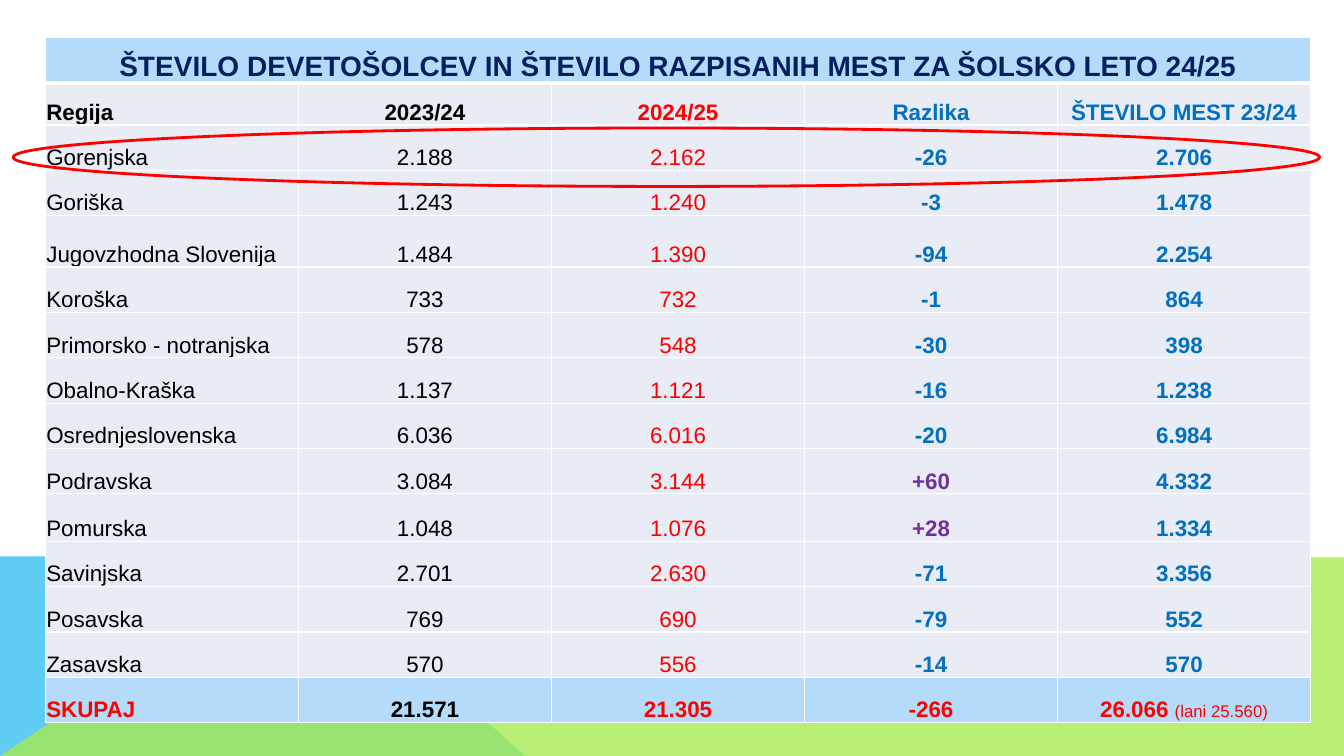
import pptx
import pptx.dml.color
import pptx.enum.shapes
import pptx.enum.text
import pptx.oxml
import pptx.oxml.ns
import pptx.util
from lxml import etree

Inches = pptx.util.Inches
RGBColor = pptx.dml.color.RGBColor
ALIGN = pptx.enum.text.PP_ALIGN

WHITE = RGBColor(0xFF, 0xFF, 0xFF)
BLACK = RGBColor(0x00, 0x00, 0x00)
NAVY = RGBColor(0x00, 0x20, 0x60)
RED = RGBColor(0xFF, 0x00, 0x00)
BLUE = RGBColor(0x00, 0x70, 0xC0)
PURPLE = RGBColor(0x70, 0x30, 0xA0)
LIGHT_BLUE = RGBColor(0xB4, 0xDC, 0xFA)
LAVENDER = RGBColor(0xE9, 0xEB, 0xF5)
SKY = RGBColor(0x5E, 0xCC, 0xF3)
GREEN = RGBColor(0xA7, 0xEA, 0x52)

TITLE = "ŠTEVILO DEVETOŠOLCEV IN ŠTEVILO RAZPISANIH MEST ZA ŠOLSKO LETO 24/25"
ROWS = [
    ("Regija", "2023/24", "2024/25", "Razlika", "ŠTEVILO MEST 23/24"),
    ("Gorenjska", "2.188", "2.162", "-26", "2.706"),
    ("Goriška", "1.243", "1.240", "-3", "1.478"),
    ("Jugovzhodna Slovenija", "1.484", "1.390", "-94", "2.254"),
    ("Koroška", "733", "732", "-1", "864"),
    ("Primorsko - notranjska", "578", "548", "-30", "398"),
    ("Obalno-Kraška", "1.137", "1.121", "-16", "1.238"),
    ("Osrednjeslovenska", "6.036", "6.016", "-20", "6.984"),
    ("Podravska", "3.084", "3.144", "+60", "4.332"),
    ("Pomurska", "1.048", "1.076", "+28", "1.334"),
    ("Savinjska", "2.701", "2.630", "-71", "3.356"),
    ("Posavska", "769", "690", "-79", "552"),
    ("Zasavska", "570", "556", "-14", "570"),
    ("SKUPAJ", "21.571", "21.305", "-266", "26.066 "),
]
COLUMN_COLORS = [BLACK, BLACK, RED, BLUE, BLUE]
TOTAL_COLORS = [RED, BLACK, RED, RED, RED]
ROW_HEIGHT = 0.45
SPECIAL_HEIGHTS = {1: 0.42, 4: 0.51, 10: 0.47}
TOTAL_ROW = len(ROWS)


def add_text(paragraph, text, size=16, color=BLACK, bold=False, align=ALIGN.CENTER):
    paragraph.alignment = align
    run = paragraph.add_run()
    run.text = text
    run.font.name = "Arial"
    run.font.size = pptx.util.Pt(size)
    run.font.bold = bold
    run.font.color.rgb = color


def style_cell(cell, fill, bottom_width=1):
    """Set white borders, fill, margins and bottom anchoring."""
    properties = cell._tc.get_or_add_tcPr()
    for side in "LRTB":
        width = pptx.util.Pt(bottom_width if side == "B" else 1)
        properties.append(pptx.oxml.parse_xml(
            f'<a:ln{side} {pptx.oxml.ns.nsdecls("a")} w="{width}">'
            f'<a:solidFill><a:srgbClr val="{WHITE}"/></a:solidFill></a:ln{side}>'))
    cell.fill.solid()
    cell.fill.fore_color.rgb = fill
    cell.margin_left = cell.margin_right = cell.margin_top = Inches(0.01)
    cell.margin_bottom = 0
    cell.vertical_anchor = pptx.enum.text.MSO_ANCHOR.BOTTOM


presentation = pptx.Presentation()
presentation.slide_width = Inches(13.33)
presentation.slide_height = Inches(7.5)
slide = presentation.slides.add_slide(presentation.slide_layouts[6])

# Background bands
bands = [
    (SKY, 100, [(0, 7.5), (0, 5.52), (2.98, 5.52), (5.21, 7.5)]),
    (GREEN, 80, [(0, 7.5), (2.97, 5.52), (13.33, 5.53), (13.33, 7.5)]),
]
for color, opacity, points in bands:
    corners = [(Inches(x), Inches(y)) for x, y in points]
    builder = slide.shapes.build_freeform(*corners[0])
    builder.add_line_segments(corners[1:], close=True)
    band = builder.convert_to_shape()
    band.shadow.inherit = False
    band.fill.solid()
    band.fill.fore_color.rgb = color
    band.line.fill.background()
    if opacity < 100:
        color_element = band._element.spPr.find(".//" + pptx.oxml.ns.qn("a:srgbClr"))
        alpha = etree.SubElement(color_element, pptx.oxml.ns.qn("a:alpha"))
        alpha.set("val", str(opacity * 1000))

# Table of regions
table = slide.shapes.add_table(
    len(ROWS) + 1, 5, Inches(0.45), Inches(0.37), Inches(12.55), Inches(6.77)).table
table.first_row = table.horz_banding = False
for column in table.columns:
    column.width = Inches(2.51)
for index, row in enumerate(table.rows):
    row.height = Inches(SPECIAL_HEIGHTS.get(index, ROW_HEIGHT))

title_cell = table.cell(0, 0)
title_cell.merge(table.cell(0, 4))
for cell in table.rows[0].cells:
    style_cell(cell, LIGHT_BLUE, bottom_width=3)
add_text(title_cell.text_frame.paragraphs[0], TITLE, size=20, color=NAVY, bold=True)

for row_index, values in enumerate(ROWS, start=1):
    is_total = row_index == TOTAL_ROW
    colors = TOTAL_COLORS if is_total else COLUMN_COLORS
    for column_index, value in enumerate(values):
        cell = table.cell(row_index, column_index)
        style_cell(cell, LIGHT_BLUE if is_total else LAVENDER)
        add_text(
            cell.text_frame.paragraphs[0], value,
            color=PURPLE if value.startswith("+") else colors[column_index],
            bold=row_index in (1, TOTAL_ROW) or column_index >= 3,
            align=ALIGN.LEFT if column_index == 0 else ALIGN.CENTER)

table.cell(1, 1).text_frame.paragraphs[0].line_spacing = 1.15
add_text(table.cell(TOTAL_ROW, 4).text_frame.paragraphs[0], "(lani 25.560)",
         size=12, color=RED)

# Ring around the Gorenjska row
ring = slide.shapes.add_shape(
    pptx.enum.shapes.MSO_SHAPE.OVAL,
    Inches(0.13), Inches(1.27), Inches(12.96), Inches(0.58))
ring.shadow.inherit = False
ring.fill.background()
ring.line.color.rgb = RED
ring.line.width = pptx.util.Pt(2)

presentation.save("out.pptx")
